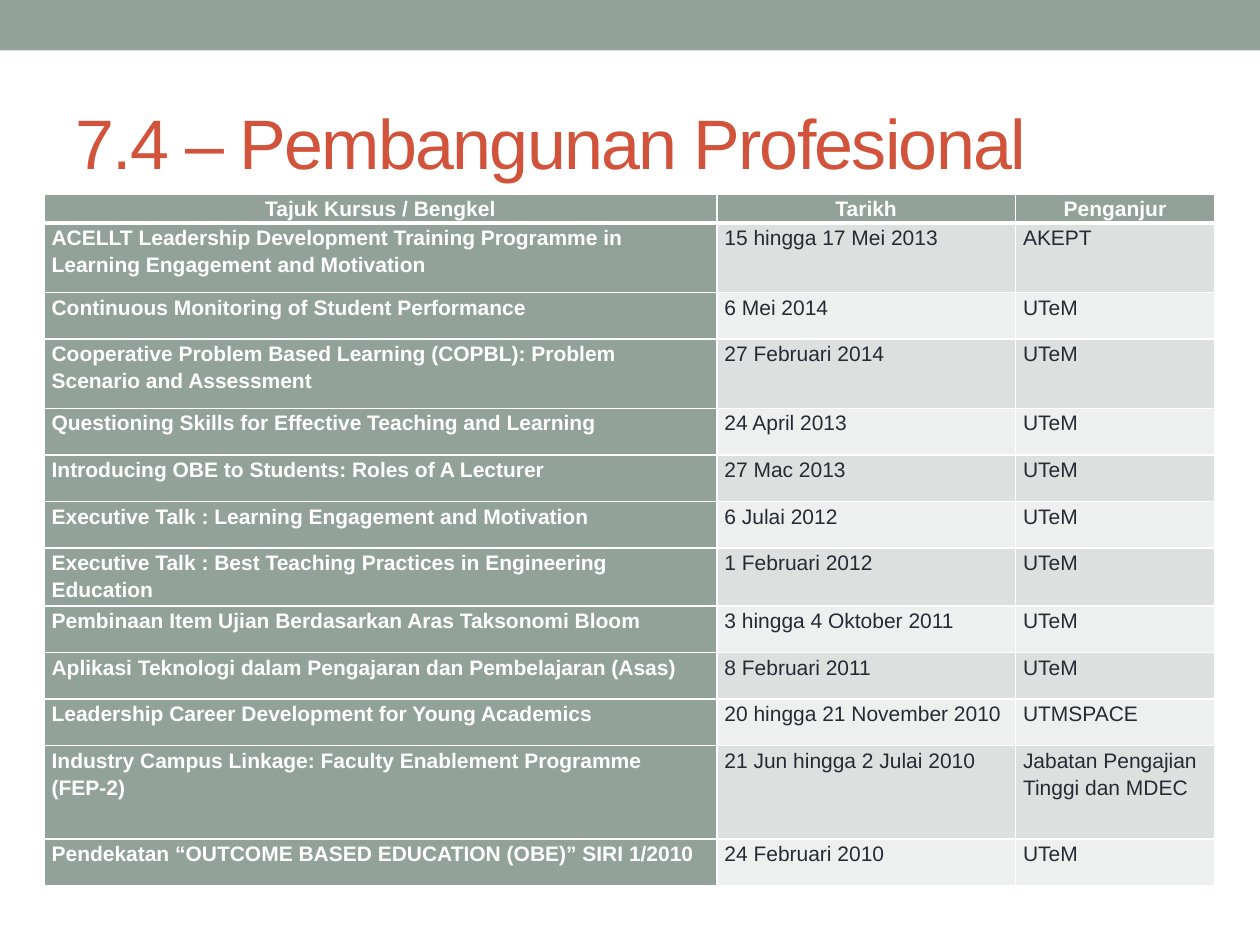
from pptx import Presentation
from pptx.dml.color import RGBColor as Rgb
from pptx.enum.shapes import MSO_SHAPE as Shape
from pptx.enum.text import MSO_ANCHOR as Anchor, PP_ALIGN as Align
from pptx.oxml.ns import qn
from pptx.util import Inches, Pt
from lxml.etree import SubElement as Sub

TITLE = "7.4 – Pembangunan Profesional"
HEAD = ("Tajuk Kursus / Bengkel", "Tarikh", "Penganjur")
ROWS = [
    ("ACELLT Leadership Development Training Programme in Learning Engagement and Motivation",
     "15 hingga 17 Mei 2013", "AKEPT"),
    ("Continuous Monitoring of Student Performance", "6 Mei 2014", "UTeM"),
    ("Cooperative Problem Based Learning (COPBL): Problem Scenario and Assessment",
     "27 Februari 2014", "UTeM"),
    ("Questioning Skills for Effective Teaching and Learning", "24 April 2013", "UTeM"),
    ("Introducing OBE to Students: Roles of A Lecturer", "27 Mac 2013", "UTeM"),
    ("Executive Talk : Learning Engagement and Motivation", "6 Julai 2012", "UTeM"),
    ("Executive Talk : Best Teaching Practices in Engineering Education",
     "1 Februari 2012", "UTeM"),
    ("Pembinaan Item Ujian Berdasarkan Aras Taksonomi Bloom",
     "3 hingga 4 Oktober 2011", "UTeM"),
    ("Aplikasi Teknologi dalam Pengajaran dan Pembelajaran (Asas)",
     "8 Februari 2011", "UTeM"),
    ("Leadership Career Development for Young Academics",
     "20 hingga 21 November 2010", "UTMSPACE"),
    ("Industry Campus Linkage: Faculty Enablement Programme (FEP-2)",
     "21 Jun hingga 2 Julai 2010", "Jabatan Pengajian Tinggi dan MDEC"),
    ("Pendekatan “OUTCOME BASED EDUCATION (OBE)” SIRI 1/2010",
     "24 Februari 2010", "UTeM"),
]
WIDTHS = (5.34, 2.37, 1.58)
LOW = 0.37
HIGH = {0: 0.18, 1: 0.55, 3: 0.55, 11: 0.74}
THEME = {"font": "Arial", "sage": "93A299", "red": "D2533C", "ink": "292934",
         "white": "FFFFFF", "bands": ("EEF0EF", "DCE0DE"), "title": 40, "body": 12}


def apply(item, values):
    """Set every attribute named in a dict."""
    for name, value in values.items():
        setattr(item, name, value)


def style(font, size, color, bold=False):
    """Give a font its face, size, weight and colour."""
    apply(font, {"name": THEME["font"], "size": Pt(size), "bold": bold})
    font.color.rgb = Rgb.from_string(color)


def paint(item, color):
    """Fill an item with one colour."""
    item.fill.solid()
    item.fill.fore_color.rgb = Rgb.from_string(color)


def edge(cell, side, width):
    """Draw one white border on a cell."""
    line = Sub(cell._tc.get_or_add_tcPr(), qn(f"a:ln{side}"), w=str(Pt(width)))
    Sub(Sub(line, qn("a:solidFill")), qn("a:srgbClr"), val=THEME["white"])


def add_bar(slide):
    """Add the band across the top."""
    bar = slide.shapes.add_shape(Shape.RECTANGLE, 0, 0, Inches(10), Inches(0.4))
    bar.shadow.inherit = False
    bar.line.fill.background()
    paint(bar, THEME["sage"])


def add_title(slide):
    """Add the heading with tight letter spacing."""
    box = slide.shapes.add_textbox(*map(Inches, (0.5, 0.58, 9, 1.08)))
    apply(box.text_frame, {"word_wrap": True, "vertical_anchor": Anchor.MIDDLE})
    run = box.text_frame.paragraphs[0].add_run()
    run.text = TITLE
    style(run.font, THEME["title"], THEME["red"])
    run._r.get_or_add_rPr().set("spc", "-100")


def fill_cell(cell, text, row, col):
    """Write and style one cell by its place in the grid."""
    key = row == 0 or col == 0
    apply(cell, {"margin_left": Inches(0.06), "margin_right": Inches(0.06),
                 "margin_top": 0, "margin_bottom": 0})
    wide = {(0, "B"), (1, "T")}
    for side in "LRTB":
        edge(cell, side, 3 if (row, side) in wide else 1)
    paint(cell, THEME["sage"] if key else THEME["bands"][row % 2])
    para = cell.text_frame.paragraphs[0]
    apply(para, {"line_spacing": 1.15,
                 "alignment": Align.LEFT if row else Align.CENTER})
    run = para.add_run()
    run.text = text
    style(run.font, THEME["body"], THEME["white" if key else "ink"], key)


def add_courses(slide):
    """Add the table of courses."""
    data = [HEAD, *ROWS]
    highs = [HIGH.get(i, LOW) for i in range(len(data))]
    spot = map(Inches, (0.35, 1.54, sum(WIDTHS), sum(highs)))
    table = slide.shapes.add_table(len(data), len(HEAD), *spot).table
    for col, width in zip(table.columns, WIDTHS):
        col.width = Inches(width)
    for r, (texts, high) in enumerate(zip(data, highs)):
        table.rows[r].height = Inches(high)
        for c, text in enumerate(texts):
            fill_cell(table.cell(r, c), text, r, c)


def main():
    """Build and save the slide."""
    deck = Presentation()
    apply(deck, {"slide_width": Inches(10), "slide_height": Inches(7.5)})
    slide = deck.slides.add_slide(deck.slide_layouts[6])
    for add in (add_bar, add_title, add_courses):
        add(slide)
    deck.save("out.pptx")


if __name__ == "__main__":
    main()
